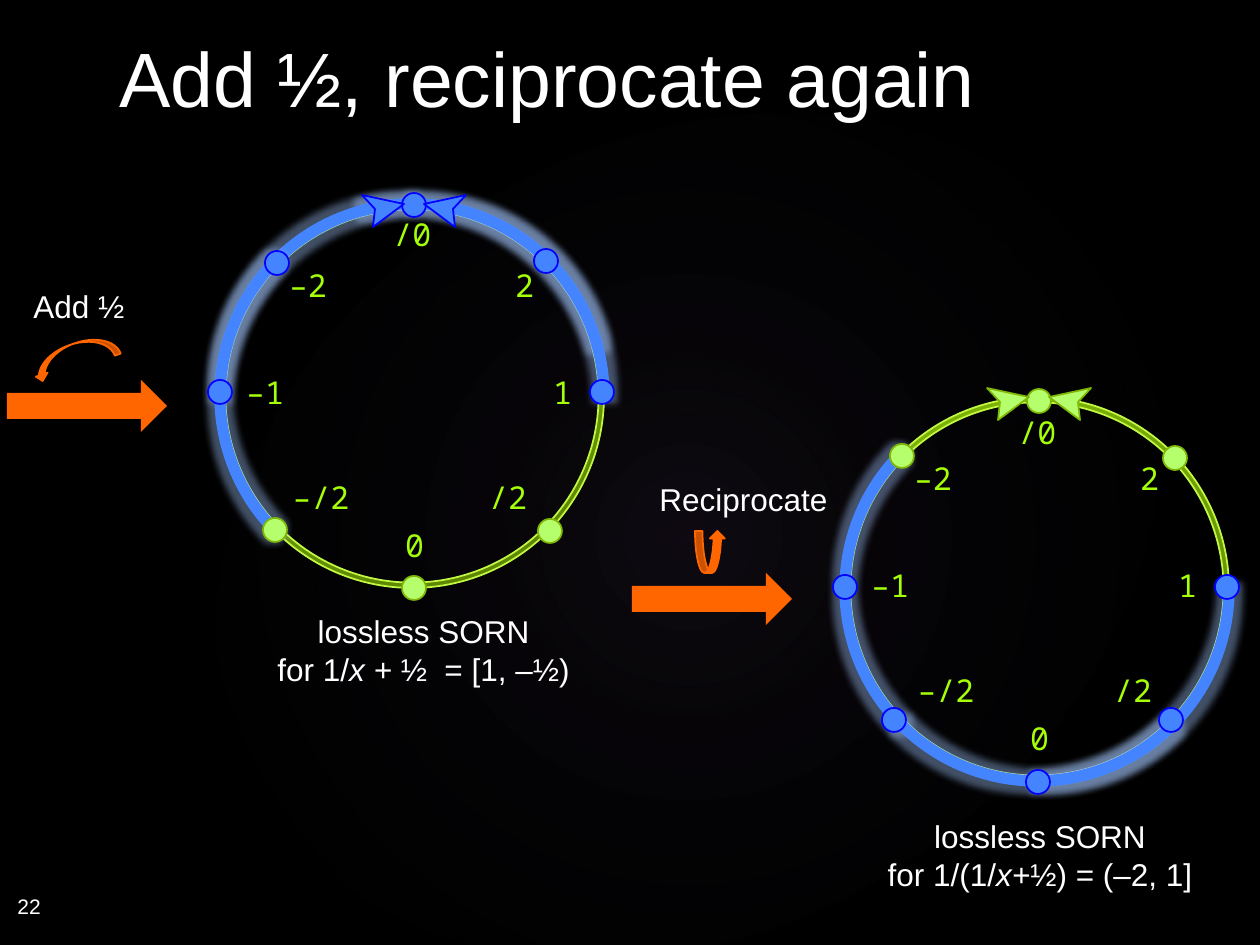
from dataclasses import dataclass

from pptx import Presentation
from pptx.dml.color import RGBColor
from pptx.enum.shapes import MSO_SHAPE
from pptx.enum.text import MSO_ANCHOR, PP_ALIGN
from pptx.oxml import parse_xml
from pptx.oxml.ns import nsdecls
from pptx.util import Pt

PX = 914400 / 126
ARC, DONUT, OVAL = MSO_SHAPE.ARC, MSO_SHAPE.DONUT, MSO_SHAPE.OVAL
RIGHT_ARROW = MSO_SHAPE.RIGHT_ARROW
CURVED_UP, CURVED_RIGHT = MSO_SHAPE.CURVED_UP_ARROW, MSO_SHAPE.CURVED_RIGHT_ARROW
LEFT, CENTER = PP_ALIGN.LEFT, PP_ALIGN.CENTER
TOP, MIDDLE, BOTTOM = MSO_ANCHOR.TOP, MSO_ANCHOR.MIDDLE, MSO_ANCHOR.BOTTOM

BLACK = RGBColor(0x00, 0x00, 0x00)
WHITE = RGBColor(0xFF, 0xFF, 0xFF)
BLUE = RGBColor(0x44, 0x85, 0xFF)
BLUE_EDGE = RGBColor(0x00, 0x00, 0xFF)
LIME = RGBColor(0xB5, 0xFF, 0x6D)
LIME_EDGE = RGBColor(0x80, 0xB6, 0x06)
LIME_DARK = RGBColor(0x59, 0x80, 0x00)
RING_EDGE = RGBColor(0xC1, 0xF9, 0x44)
LABEL_GREEN = RGBColor(0xA5, 0xFF, 0x08)
ORANGE = RGBColor(0xFF, 0x66, 0x00)
HALO = RGBColor(0xA5, 0xC8, 0xFF)
SANS, MONO = "Arial", "Noto Sans Mono"

RING_SIZE = 384
DOT_SIZE = 24
HEAD_POINTS = [(184, 0), (142, -9), (155, 5), (153, 23)]
HEAD_MIRROR = 388


@dataclass
class Label:
    text: str
    x: int
    y: int
    width: int
    height: int = 67
    tight: bool = False


@dataclass
class Ring:
    x: int
    y: int
    top_label_shift: int
    arc_turns: list[int]
    blue_dots: list[tuple[int, int]]
    lime_dots: list[tuple[int, int]]
    heads_blue: bool


LABELS = [
    Label("0", 166, 316, 57),
    Label("1", 331, 163, 23, 50, True),
    Label("–1", 23, 163, 44, 50, True),
    Label("/2", 246, 268, 84),
    Label("2", 271, 56, 67),
    Label("–2", 45, 56, 86),
    Label("–/2", 43, 268, 116),
]
RINGS = [
    Ring(220, 204, 5, [345, 270, 0, 225],
         [(590, 380), (534, 249), (402, 193), (265, 251), (208, 380)],
         [(263, 518), (402, 576), (538, 519)], True),
    Ring(845, 397, 10, [225, 135, 90],
         [(1159, 708), (1026, 770), (882, 708), (833, 575), (1215, 575)],
         [(1027, 389), (1163, 446), (890, 444)], False),
]


def px(value: float) -> int:
    return round(value * PX)


def add_shape(page, kind, x: int, y: int, width: int, height: int, fill=None,
              edge=None, weight: float = 1, turn: float = 0):
    shape = page.shapes.add_shape(kind, px(x), px(y), px(width), px(height))
    return paint(shape, fill, edge, weight, turn)


def paint(shape, fill, edge, weight: float = 1, turn: float = 0):
    shape.shadow.inherit = False
    shape.rotation = turn
    if fill is None:
        shape.fill.background()
    else:
        shape.fill.solid()
        shape.fill.fore_color.rgb = fill
    if edge is None:
        shape.line.fill.background()
    else:
        shape.line.color.rgb = edge
        shape.line.width = Pt(weight)
    return shape


def add_glow(shape, radius: float, opacity: int) -> None:
    effects = shape._element.spPr.find(
        "{http://schemas.openxmlformats.org/drawingml/2006/main}effectLst")
    effects.append(parse_xml(
        f'<a:glow {nsdecls("a")} rad="{Pt(radius)}"><a:srgbClr val="{HALO}">'
        f'<a:alpha val="{opacity * 1000}"/></a:srgbClr></a:glow>'))


def add_text(page, spans: list[tuple[str, bool]], x: int, y: int, width: int,
             height: int, size: int = 18, font: str = SANS, color=WHITE,
             align=LEFT, anchor=TOP, wrap: bool = True, tight: bool = False) -> None:
    box = page.shapes.add_textbox(px(x), px(y), px(width), px(height))
    frame = box.text_frame
    frame.word_wrap = wrap
    frame.vertical_anchor = anchor
    if tight:
        frame.margin_left = frame.margin_right = 0
        frame.margin_top = frame.margin_bottom = 0
    para = frame.paragraphs[0]
    para.text = spans[0][0]
    para.alignment = align
    for text, _ in spans[1:]:
        para.add_run().text = text
    for span in para.runs:
        span.font.size = Pt(size)
        span.font.name = font
        span.font.color.rgb = color
        span.font.italic = (span.text, True) in spans


def add_label(page, ring: Ring, label: Label) -> None:
    add_text(page, [(label.text, False)], ring.x + label.x, ring.y + label.y,
             label.width, label.height, font=MONO, color=LABEL_GREEN, align=CENTER,
             anchor=MIDDLE if label.tight else TOP, wrap=not label.tight,
             tight=label.tight)


def add_head(page, ring: Ring, mirrored: bool) -> None:
    points = [(px(ring.x + (HEAD_MIRROR - x if mirrored else x)), px(ring.y + y))
              for x, y in HEAD_POINTS]
    builder = page.shapes.build_freeform(*points[0])
    builder.add_line_segments(points[1:], close=True)
    colors = (BLUE, BLUE_EDGE) if ring.heads_blue else (LIME, LIME_EDGE)
    paint(builder.convert_to_shape(), *colors)


def add_ring(page, ring: Ring) -> None:
    band = add_shape(page, DONUT, ring.x, ring.y, RING_SIZE, RING_SIZE, edge=RING_EDGE)
    band.adjustments[0] = 0.014
    band.fill.gradient()
    band.fill.gradient_angle = 291
    for stop, color in zip(band.fill.gradient_stops, (LIME_EDGE, LIME_DARK)):
        stop.color.rgb = color
    for label in [Label("/0", 148, ring.top_label_shift, 89), *LABELS]:
        add_label(page, ring, label)
    for turn in ring.arc_turns:
        arc = add_shape(page, ARC, ring.x, ring.y, RING_SIZE, RING_SIZE,
                        edge=BLUE, weight=6.5, turn=turn)
        add_glow(arc, 8, 40)
    for dots, fill, edge in ((ring.blue_dots, BLUE, BLUE_EDGE),
                             (ring.lime_dots, LIME, LIME_EDGE)):
        for x, y in dots:
            add_shape(page, OVAL, x, y, DOT_SIZE, DOT_SIZE, fill, edge)
    for mirrored in (False, True):
        add_head(page, ring, mirrored)


def add_backdrop(page) -> None:
    page.background.fill.solid()
    page.background.fill.fore_color.rgb = BLACK
    haze = add_shape(page, OVAL, 189, 144, 998, 786, turn=328.7)
    properties = haze._element.spPr
    properties.replace(properties.find(
        "{http://schemas.openxmlformats.org/drawingml/2006/main}noFill"), parse_xml(
        f'<a:gradFill {nsdecls("a")}><a:gsLst>'
        '<a:gs pos="0"><a:srgbClr val="BB85EC"><a:alpha val="7000"/></a:srgbClr></a:gs>'
        '<a:gs pos="58000"><a:srgbClr val="465466"><a:alpha val="0"/></a:srgbClr></a:gs>'
        '</a:gsLst><a:path path="circle"><a:fillToRect l="50000" t="50000" '
        'r="50000" b="50000"/></a:path></a:gradFill>'))


def main() -> None:
    deck = Presentation()
    deck.slide_width, deck.slide_height = px(1260), px(945)
    page = deck.slides.add_slide(deck.slide_layouts[6])
    add_backdrop(page)
    add_text(page, [("22", False)], 5, 887, 89, 38, size=12)
    add_text(page, [("Add ½, reciprocate again", False)], 107, 47, 1040, 82,
             size=44, anchor=BOTTOM)
    for ring in RINGS:
        add_ring(page, ring)
    add_text(page, [("lossless SORN\vfor 1/", False), ("x + ", True),
                    ("½  = [1, –½)", False)], 256, 606, 335, 89, align=CENTER, wrap=False)
    add_text(page, [("lossless SORN\vfor 1/(1/", False), ("x+", True),
                    ("½) = (–2, 1]", False)], 866, 811, 348, 89, align=CENTER, wrap=False)
    for x, y in ((7, 380), (632, 573)):
        add_shape(page, RIGHT_ARROW, x, y, 160, 52, ORANGE)
    add_shape(page, CURVED_UP, 30, 344, 89, 25, ORANGE, ORANGE, turn=160.7)
    add_shape(page, CURVED_RIGHT, 689, 537, 42, 30, ORANGE, ORANGE, turn=270)
    add_text(page, [("Add ½", False)], 21, 281, 120, 50, wrap=False)
    add_text(page, [("Reciprocate", False)], 647, 474, 195, 50, wrap=False)
    deck.save("out.pptx")


if __name__ == "__main__":
    main()
